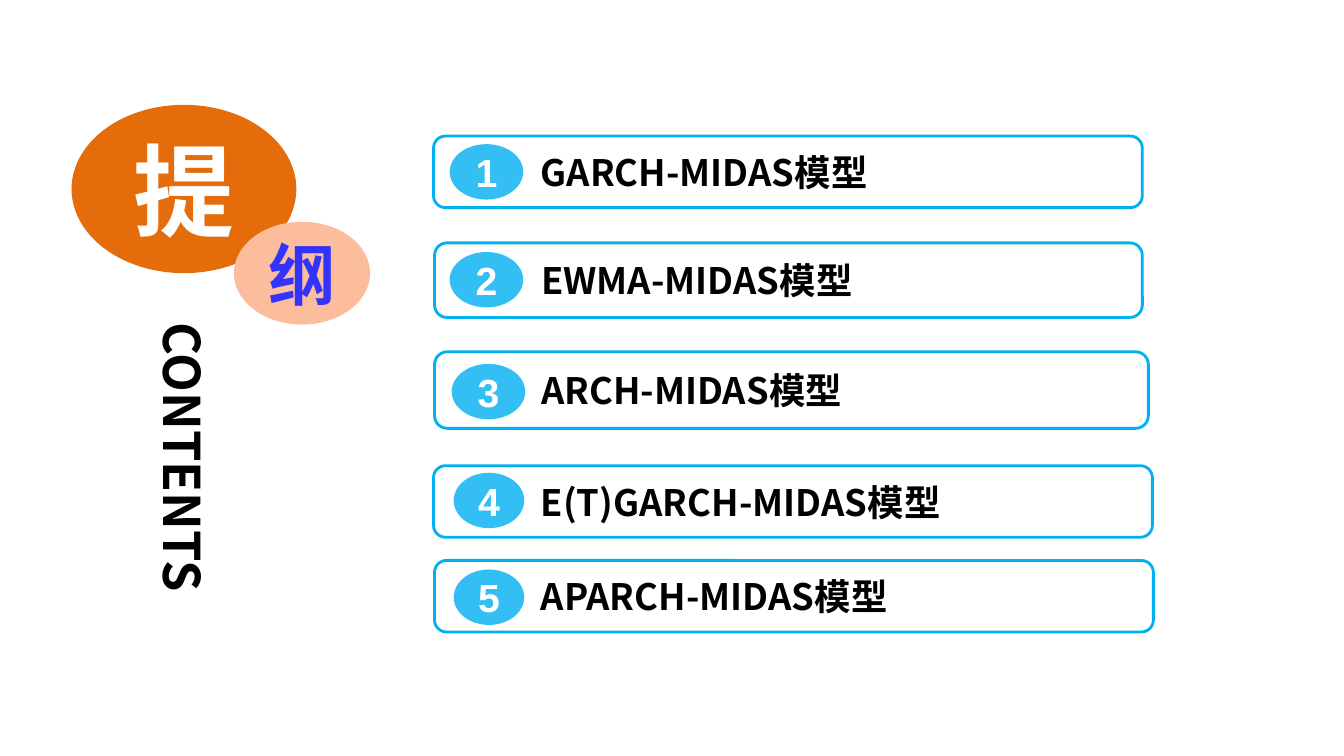
from pptx import Presentation
from pptx.dml.color import RGBColor
from pptx.enum.shapes import MSO_SHAPE as Kind
from pptx.enum.text import MSO_ANCHOR as Anchor, PP_ALIGN as Align
from pptx.oxml.ns import qn
from pptx.util import Inches, Pt
from lxml.etree import SubElement as add_sub

CJK = "Noto Sans CJK SC"
BLUE, WHITE, BLACK = "00B0F0", "FFFFFF", "000000"
TEXT_X = 5.33  # shared left edge of the topic names

# Topic, bar (left, top, width, height), badge (left, top, width)
TOPICS = [
    ("GARCH-MIDAS模型", (4.3, 1.35, 7.03, 0.71), (4.46, 1.43, 0.73)),
    ("EWMA-MIDAS模型", (4.31, 2.41, 7.02, 0.74), (4.46, 2.5, 0.73)),
    ("ARCH-MIDAS模型", (4.31, 3.49, 7.08, 0.76), (4.48, 3.61, 0.73)),
    ("E(T)GARCH-MIDAS模型", (4.3, 4.62, 7.13, 0.71), (4.5, 4.69, 0.7)),
    ("APARCH-MIDAS模型", (4.31, 5.56, 7.13, 0.71), (4.5, 5.65, 0.7)),
]


def color(code):
    return RGBColor.from_string(code)


def write(shape, text, size, ink, font=CJK, align=Align.CENTER, left=0):
    """Put one bold line into a shape, centred vertically."""
    frame = shape.text_frame
    frame.margin_left = Inches(left)
    frame.margin_top = frame.margin_right = frame.margin_bottom = 0
    frame.vertical_anchor = Anchor.MIDDLE
    frame.word_wrap = True
    para = frame.paragraphs[0]
    para.text = text
    para.alignment = align
    para.font.size = Pt(size)
    para.font.bold = True
    para.font.color.rgb = color(ink)
    para.font.name = font
    props = para._p.pPr.find(qn("a:defRPr"))
    add_sub(props, qn("a:ea")).set("typeface", font)


def draw(slide, kind, box, fill, line=None):
    """Add a flat shape, outlined only when a line colour is given."""
    shape = slide.shapes.add_shape(kind, *map(Inches, box))
    shape.shadow.inherit = False
    shape.fill.solid()
    shape.fill.fore_color.rgb = color(fill)
    if line:
        shape.line.color.rgb = color(line)
        shape.line.width = Pt(2)
    else:
        shape.line.fill.background()
    return shape


def add_disc(slide, box, fill, text, size, ink, font=CJK):
    disc = draw(slide, Kind.OVAL, box, fill)
    write(disc, text, size, ink, font)
    return disc


def add_topic(slide, num, name, box, spot):
    bar = draw(slide, Kind.ROUNDED_RECTANGLE, box, WHITE, BLUE)
    write(bar, name, 26, BLACK, align=Align.LEFT, left=TEXT_X - box[0])
    badge = add_disc(slide, (*spot, 0.55), BLUE, str(num), 28, WHITE, "Arial")
    badge.text_frame.word_wrap = False
    # Badge fill is 80% opaque
    tint = badge._element.spPr.find(qn("a:solidFill"))[0]
    add_sub(tint, qn("a:alpha")).set("val", "80000")


def add_side(slide, box, text):
    """Add a vertical caption."""
    side = slide.shapes.add_textbox(*map(Inches, box))
    write(side, text, 36, BLACK, align=Align.LEFT)
    side.text_frame._txBody.bodyPr.set("vert", "eaVert")


def main():
    deck = Presentation()
    deck.slide_width, deck.slide_height = Inches(13.33), Inches(7.5)
    slide = deck.slides.add_slide(deck.slide_layouts[6])

    # Title discs and caption
    add_disc(slide, (0.71, 1.04, 2.23, 1.67), "E46C0A", "提", 72, WHITE)
    add_disc(slide, (2.32, 2.2, 1.35, 1.02), "FBBD9B", "纲", 48, "3333FF")
    add_side(slide, (1.38, 3.2, 0.89, 3), "CONTENTS")

    # Numbered topics
    for num, (name, box, spot) in enumerate(TOPICS, 1):
        add_topic(slide, num, name, box, spot)

    deck.save("out.pptx")


if __name__ == "__main__":
    main()
